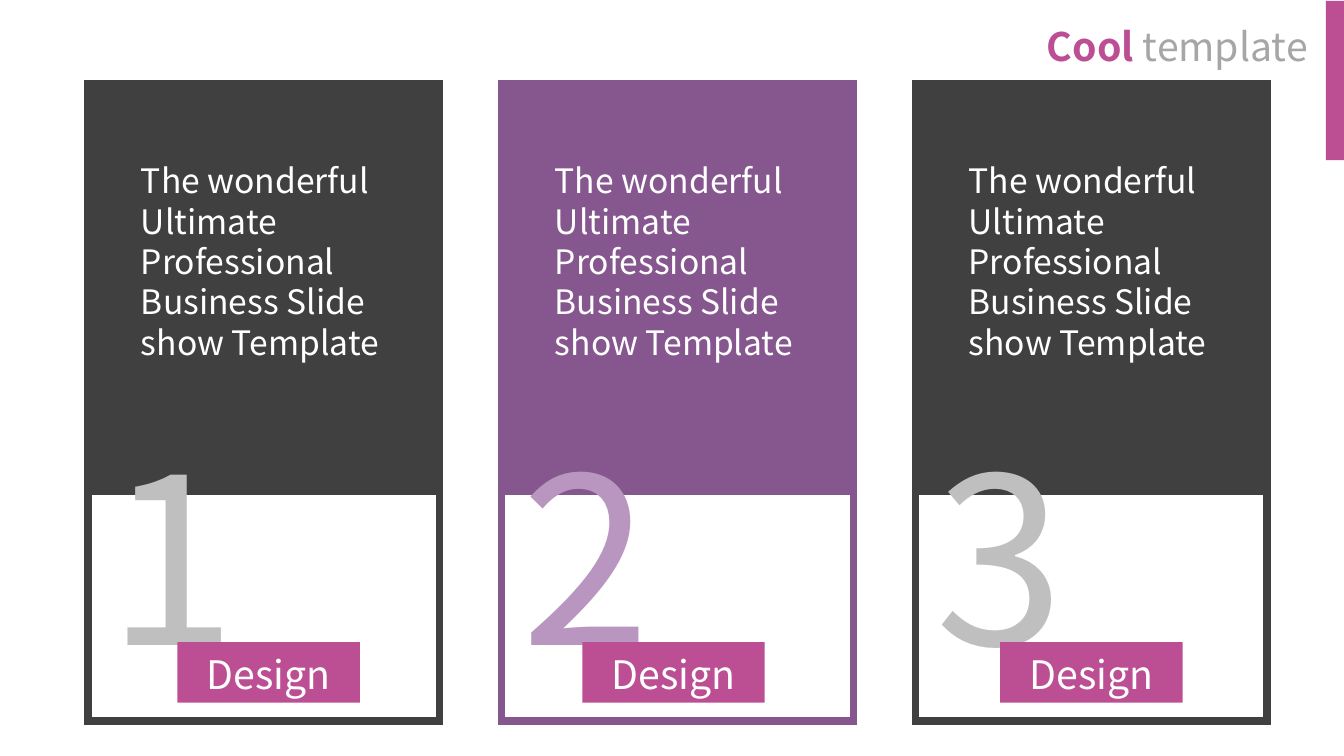
from dataclasses import dataclass

from lxml import etree
from pptx import Presentation
from pptx.dml.color import RGBColor
from pptx.enum import shapes, text
from pptx.oxml import ns
from pptx.util import Inches, Pt


@dataclass(frozen=True)
class Theme:
    font: str = "Noto Sans CJK JP"
    dark: str = "404040"
    plum: str = "86568E"
    lilac: str = "B996BF"
    pink: str = "BC4E94"
    silver: str = "BFBFBF"
    gray: str = "A6A6A6"
    white: str = "FFFFFF"
    body: int = 24
    head: int = 28
    digit: int = 166
    edge: float = 5.5


T = Theme()
BLURB = "The wonderful Ultimate Professional Business Slide show Template"


def style(font, size, color):
    font.name = T.font
    font.size = Pt(size)
    font.color.rgb = RGBColor.from_string(color)


def block(slide, x, y, w, h, fill, edge=None):
    """Plain rectangle, outlined only when an edge colour is given."""
    rect = slide.shapes.add_shape(
        shapes.MSO_SHAPE.RECTANGLE, Inches(x), Inches(y), Inches(w), Inches(h))
    rect.shadow.inherit = False
    rect.fill.solid()
    rect.fill.fore_color.rgb = RGBColor.from_string(fill)
    if edge:
        rect.line.color.rgb = RGBColor.from_string(edge)
        rect.line.width = Pt(T.edge)
        # Square corners
        outline = rect.line.fill._xPr
        etree.SubElement(outline, ns.qn("a:miter"), lim="800000")
    else:
        rect.line.fill.background()
    return rect


def label(slide, x, y, w, h, words, size, color, wrap=True):
    box = slide.shapes.add_textbox(Inches(x), Inches(y), Inches(w), Inches(h))
    frame = box.text_frame
    frame.word_wrap = wrap
    frame.text = words
    style(frame.paragraphs[0].font, size, color)


def badge(slide, x, y, words):
    frame = block(slide, x, y, 1.81, 0.6, T.pink).text_frame
    frame.margin_top = Inches(0.08)
    frame.text = words
    line = frame.paragraphs[0]
    line.alignment = text.PP_ALIGN.CENTER
    style(line.font, T.head, T.white)


def card(slide, x, y, w, digit, fill, tint, shift):
    # Coloured top and framed white base
    block(slide, x, y, w, 4.02, fill, fill)
    block(slide, x, y + 4.04, w, 2.28, T.white, fill)
    # Number, badge and blurb
    label(slide, x + 0.1, y + 3.22, 1.65, 2.89, digit, T.digit, tint, wrap=False)
    badge(slide, x + shift, y + 5.54, "Design")
    label(slide, x + 0.43, y + 0.71, 2.64, 2.52, BLURB, T.body, T.white)


def header(slide, x, y, w, h):
    # Title in two colours
    title = slide.shapes.title
    title.left, title.top = Inches(x), Inches(y)
    title.width, title.height = Inches(w), Inches(h)
    frame = title.text_frame
    frame.word_wrap = False
    frame.auto_size = text.MSO_AUTO_SIZE.NONE
    frame.vertical_anchor = text.MSO_ANCHOR.TOP
    line = frame.paragraphs[0]
    line.alignment = text.PP_ALIGN.RIGHT
    for words, color, bold in (("Cool ", T.pink, True), ("template", T.gray, False)):
        run = line.add_run()
        run.text = words
        style(run.font, T.head, color)
        run.font.bold = bold
    # Accent at the slide's edge
    block(slide, x + w + 0.08, 0.01, 0.18, 1.58, T.pink)


def main():
    deck = Presentation()
    deck.slide_width, deck.slide_height = Inches(13.33), Inches(7.5)
    slide = deck.slides.add_slide(deck.slide_layouts.get_by_name("Title Only"))
    header(slide, 10.14, 0.17, 2.93, 0.57)
    cards = (
        ("1", T.dark, T.silver, 0.89),
        ("2", T.plum, T.lilac, 0.8),
        ("3", T.dark, T.silver, 0.84),
    )
    left, right, wide = 0.87, 12.57, 3.49
    step = (right - left - wide) / (len(cards) - 1)
    for i, (digit, fill, tint, shift) in enumerate(cards):
        card(slide, left + i * step, 0.83, wide, digit, fill, tint, shift)
    deck.save("out.pptx")


if __name__ == "__main__":
    main()
